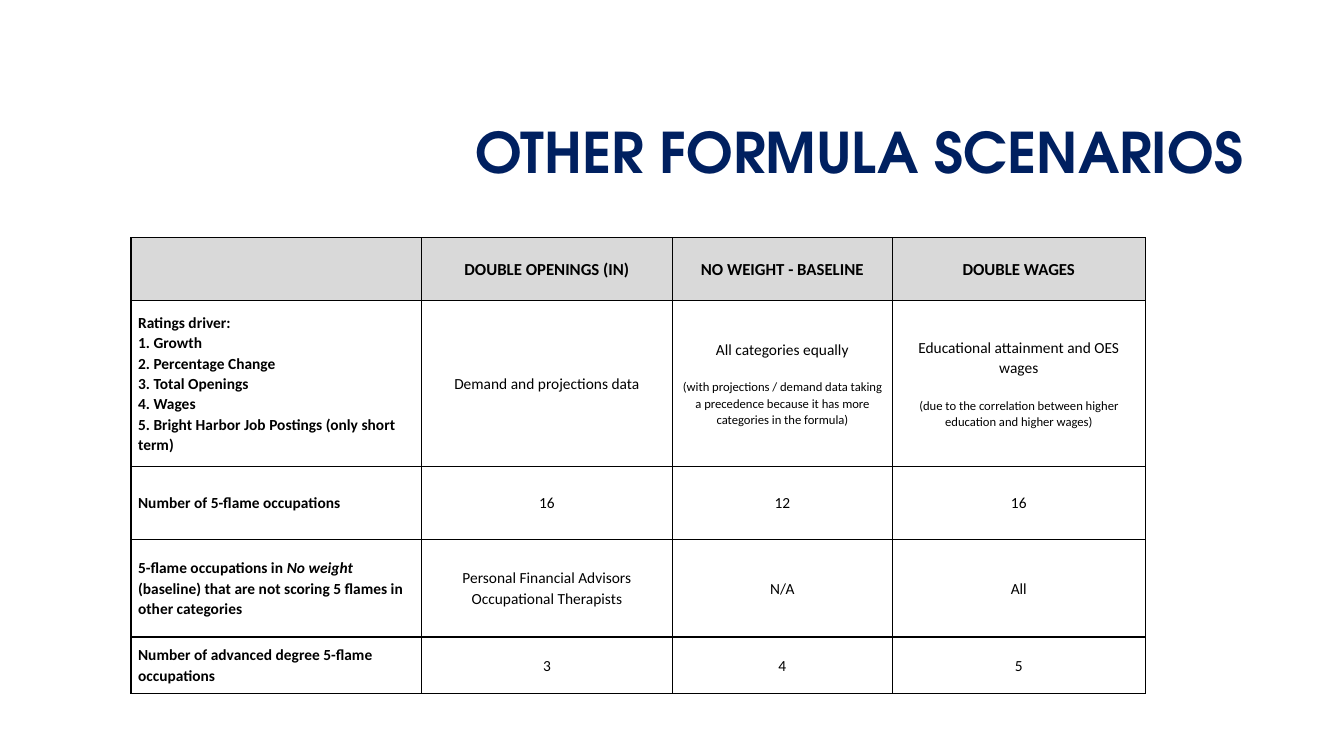
from dataclasses import dataclass

from lxml import etree
from pptx import Presentation
from pptx.dml.color import RGBColor
from pptx.enum.text import MSO_ANCHOR, PP_ALIGN
from pptx.oxml.ns import qn
from pptx.util import Inches, Pt

LEFT, CENTER, RIGHT = PP_ALIGN.LEFT, PP_ALIGN.CENTER, PP_ALIGN.RIGHT
MIDDLE = MSO_ANCHOR.MIDDLE
BLANK_LAYOUT = 6


@dataclass(frozen=True)
class Theme:
    navy: str = "002060"
    black: str = "000000"
    header_fill: str = "D9D9D9"
    title_font: str = "TeX Gyre Adventor"
    body_font: str = "Calibri"
    title_size: int = 40
    header_size: int = 12
    body_size: int = 11
    note_size: int = 9
    border_width: int = 1
    title_spacing: float = 0.9
    table_spacing: float = 1.07
    note_gap: int = 14


THEME = Theme()

# Font values for each kind of run
BODY = {"name": THEME.body_font, "size": Pt(THEME.body_size), "bold": False}
STYLES = {
    "title": {"name": THEME.title_font, "size": Pt(THEME.title_size), "bold": True},
    "header": {**BODY, "size": Pt(THEME.header_size), "bold": True},
    "label": {**BODY, "bold": True},
    "label italic": {**BODY, "bold": True, "italic": True},
    "body": BODY,
    "note": {**BODY, "size": Pt(THEME.note_size)},
}

# Boxes: left, top, width, height in inches
SLIDE_SIZE = (13.33, 7.5)
TITLE_BOX = (3.17, 0.84, 9.42, 1.41)
COLUMN_WIDTHS = (2.88, 2.49, 2.18, 2.51)
ROW_HEIGHTS = (0.62, 1.65, 0.72, 0.97, 0.56)
TABLE_BOX = (1.3, 2.36, sum(COLUMN_WIDTHS), sum(ROW_HEIGHTS))

# A cell is one text, or a list of paragraphs; a paragraph is a list of (text, style) runs
HEADERS = ["", "DOUBLE OPENINGS (IN)", "NO WEIGHT - BASELINE", "DOUBLE WAGES"]
RATINGS_DRIVERS = [
    "Ratings driver:", "1. Growth", "2. Percentage Change", "3. Total Openings", "4. Wages",
    "5. Bright Harbor Job Postings (only short term)",
]
SCENARIO_ROWS = [
    [
        [[(line, "label")] for line in RATINGS_DRIVERS],
        "Demand and projections data",
        [
            [("All categories equally", "body")],
            [("(with projections / demand data taking a precedence because it has more "
              "categories in the formula)", "note")],
        ],
        [
            [("Educational attainment and OES wages", "body")],
            [("(due to the correlation between higher education and higher wages)", "note")],
        ],
    ],
    ["Number of 5-flame occupations", "16", "12", "16"],
    [
        [[("5-flame occupations in ", "label"), ("No weight ", "label italic"),
          ("(baseline) that are not scoring 5 flames in other categories", "label")]],
        "Personal Financial Advisors Occupational Therapists", "N/A", "All",
    ],
    ["Number of advanced degree 5-flame occupations", "3", "4", "5"],
]


def write_paragraphs(text_frame, paragraphs, alignment, line_spacing, color):
    for index, runs in enumerate(paragraphs):
        paragraph = text_frame.add_paragraph() if index else text_frame.paragraphs[0]
        paragraph.alignment = alignment
        paragraph.line_spacing = line_spacing
        if index and runs[0][1] == "note":
            paragraph.space_before = Pt(THEME.note_gap)
        for text, style in runs:
            run = paragraph.add_run()
            run.text = text
            for attribute, value in STYLES[style].items():
                setattr(run.font, attribute, value)
            run.font.color.rgb = RGBColor.from_string(color)


def add_borders(cell):
    properties = cell._tc.get_or_add_tcPr()
    for side in ("lnL", "lnR", "lnT", "lnB"):
        line = etree.SubElement(properties, qn(f"a:{side}"), w=str(Pt(THEME.border_width)))
        fill = etree.SubElement(line, qn("a:solidFill"))
        etree.SubElement(fill, qn("a:srgbClr"), val=THEME.black)


def add_title(slide, box):
    text_frame = slide.shapes.add_textbox(*map(Inches, box)).text_frame
    text_frame.word_wrap = True
    text_frame.vertical_anchor = MIDDLE
    title = [[("OTHER FORMULA SCENARIOS ", "title")]]
    write_paragraphs(text_frame, title, RIGHT, THEME.title_spacing, THEME.navy)


def fill_cell(cell, content, style, alignment):
    cell_format = {
        "vertical_anchor": MIDDLE,
        "margin_left": Inches(0.07), "margin_right": Inches(0.07),
        "margin_top": 0, "margin_bottom": 0,
    }
    for attribute, value in cell_format.items():
        setattr(cell, attribute, value)
    add_borders(cell)
    if style == "header":
        cell.fill.solid()
        cell.fill.fore_color.rgb = RGBColor.from_string(THEME.header_fill)
    else:
        cell.fill.background()
    if content:
        paragraphs = [[(content, style)]] if isinstance(content, str) else content
        write_paragraphs(cell.text_frame, paragraphs, alignment, THEME.table_spacing, THEME.black)


def add_scenario_table(slide, box):
    rows = [HEADERS, *SCENARIO_ROWS]
    table = slide.shapes.add_table(len(rows), len(HEADERS), *map(Inches, box)).table
    table.horz_banding = False
    for column, width in zip(table.columns, COLUMN_WIDTHS):
        column.width = Inches(width)
    for row, height in zip(table.rows, ROW_HEIGHTS):
        row.height = Inches(height)
    for row_index, contents in enumerate(rows):
        for column_index, content in enumerate(contents):
            is_label = row_index > 0 and column_index == 0
            style = "header" if row_index == 0 else "label" if is_label else "body"
            alignment = LEFT if is_label else CENTER
            fill_cell(table.cell(row_index, column_index), content, style, alignment)


def main():
    presentation = Presentation()
    presentation.slide_width, presentation.slide_height = map(Inches, SLIDE_SIZE)
    slide = presentation.slides.add_slide(presentation.slide_layouts[BLANK_LAYOUT])
    add_title(slide, TITLE_BOX)
    add_scenario_table(slide, TABLE_BOX)
    presentation.save("out.pptx")


if __name__ == "__main__":
    main()
